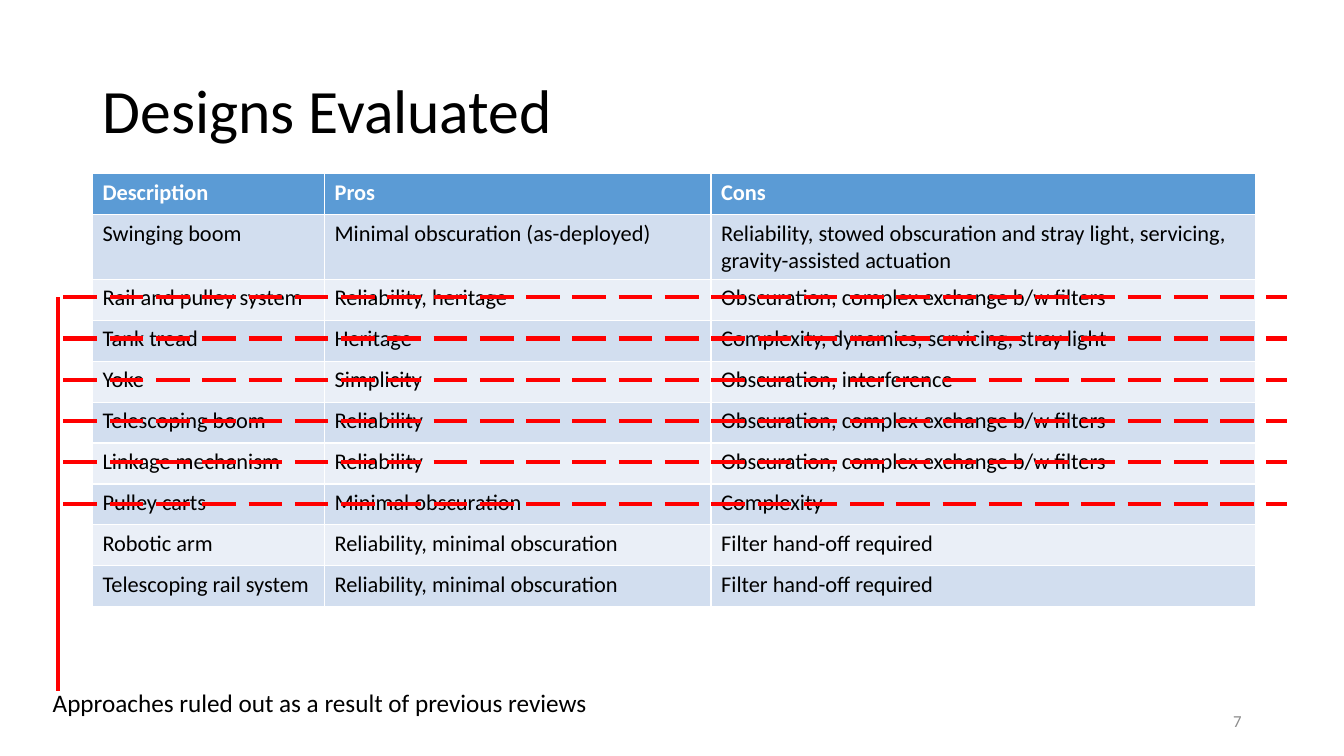
"""Build the slide that lists the evaluated designs and strikes out the rejected ones."""
from pptx import Presentation
from pptx.dml.color import RGBColor
from pptx.enum.dml import MSO_LINE
from pptx.enum.shapes import MSO_CONNECTOR
from pptx.enum.text import MSO_ANCHOR, PP_ALIGN
from pptx.oxml.ns import qn
from pptx.util import Cm, Pt
from lxml.etree import SubElement

BLACK = RGBColor(0x00, 0x00, 0x00)
WHITE = RGBColor(0xFF, 0xFF, 0xFF)
GREY = RGBColor(0x8C, 0x8C, 0x8C)
RED = RGBColor(0xFF, 0x00, 0x00)
HEADER_BLUE = RGBColor(0x5B, 0x9B, 0xD5)
BAND_DARK = RGBColor(0xD2, 0xDE, 0xEF)
BAND_LIGHT = RGBColor(0xEA, 0xEF, 0xF7)

DESIGNS = [
    ("Description", "Pros", "Cons"),
    ("Swinging boom", "Minimal obscuration (as-deployed)",
     "Reliability, stowed obscuration and stray light, servicing, gravity-assisted actuation"),
    ("Rail and pulley system", "Reliability, heritage",
     "Obscuration, complex exchange b/w filters"),
    ("Tank tread", "Heritage", "Complexity, dynamics, servicing, stray light"),
    ("Yoke", "Simplicity", "Obscuration, interference"),
    ("Telescoping boom", "Reliability", "Obscuration, complex exchange b/w filters"),
    ("Linkage mechanism", "Reliability", "Obscuration, complex exchange b/w filters"),
    ("Pulley carts", "Minimal obscuration", "Complexity"),
    ("Robotic arm", "Reliability, minimal obscuration", "Filter hand-off required"),
    ("Telescoping rail system", "Reliability, minimal obscuration", "Filter hand-off required"),
]
COLUMN_WIDTHS = (5.85, 9.74, 13.72)
ROW_HEIGHT = 1.03
RULED_OUT = 6
STRIKE_TOP, STRIKE_STEP = 7.49, 1.04


def style(paragraph, size, color, align=PP_ALIGN.LEFT, bold=False):
    paragraph.alignment = align
    paragraph.font.name = "Calibri"
    paragraph.font.size = Pt(size)
    paragraph.font.bold = bold
    paragraph.font.color.rgb = color


def add_red_line(x1, y1, x2, y2):
    connector = slide.shapes.add_connector(
        MSO_CONNECTOR.STRAIGHT, Cm(x1), Cm(y1), Cm(x2), Cm(y2))
    connector.line.color.rgb = RED
    connector.line.width = Pt(3)
    SubElement(connector._element.spPr, qn("a:effectLst"))
    return connector


prs = Presentation()
prs.slide_width, prs.slide_height = Cm(33.87), Cm(19.05)
slide = prs.slides.add_slide(prs.slide_layouts[5])

title = slide.shapes.title
title.left, title.top, title.width, title.height = Cm(2.33), Cm(1.01), Cm(29.21), Cm(3.68)
title.text_frame.text = "Designs Evaluated"
title.text_frame.vertical_anchor = MSO_ANCHOR.MIDDLE
style(title.text_frame.paragraphs[0], 44, BLACK)
title.text_frame.paragraphs[0].line_spacing = 0.9

designs = slide.shapes.add_table(
    len(DESIGNS), len(COLUMN_WIDTHS), Cm(2.33), Cm(4.38),
    Cm(sum(COLUMN_WIDTHS)), Cm(ROW_HEIGHT * len(DESIGNS))).table
for column, width in zip(designs.columns, COLUMN_WIDTHS):
    column.width = Cm(width)
for row_index, entries in enumerate(DESIGNS):
    designs.rows[row_index].height = Cm(ROW_HEIGHT)
    is_header = row_index == 0
    band = HEADER_BLUE if is_header else BAND_DARK if row_index % 2 else BAND_LIGHT
    for column_index, entry in enumerate(entries):
        cell = designs.cell(row_index, column_index)
        cell.text = entry
        cell.fill.solid()
        cell.fill.fore_color.rgb = band
        style(cell.text_frame.paragraphs[0], 16, WHITE if is_header else BLACK, bold=is_header)

for strike_index in range(RULED_OUT):
    strike_y = STRIKE_TOP + strike_index * STRIKE_STEP
    strike = add_red_line(1.6, strike_y, 32.44, strike_y)
    strike.line.dash_style = MSO_LINE.LONG_DASH
add_red_line(1.47, STRIKE_TOP, 1.47, 17.42)

for words, left, top, width, size, color, align, anchor in [
    ("7", 23.92, 17.66, 7.62, 12, GREY, PP_ALIGN.RIGHT, MSO_ANCHOR.MIDDLE),
    ("Approaches ruled out as a result of previous reviews",
     0.91, 17.2, 14.3, 18, BLACK, PP_ALIGN.CENTER, MSO_ANCHOR.TOP),
]:
    caption = slide.shapes.add_textbox(Cm(left), Cm(top), Cm(width), Cm(1.02)).text_frame
    caption.word_wrap = True
    caption.vertical_anchor = anchor
    caption.text = words
    style(caption.paragraphs[0], size, color, align)

prs.save("out.pptx")
